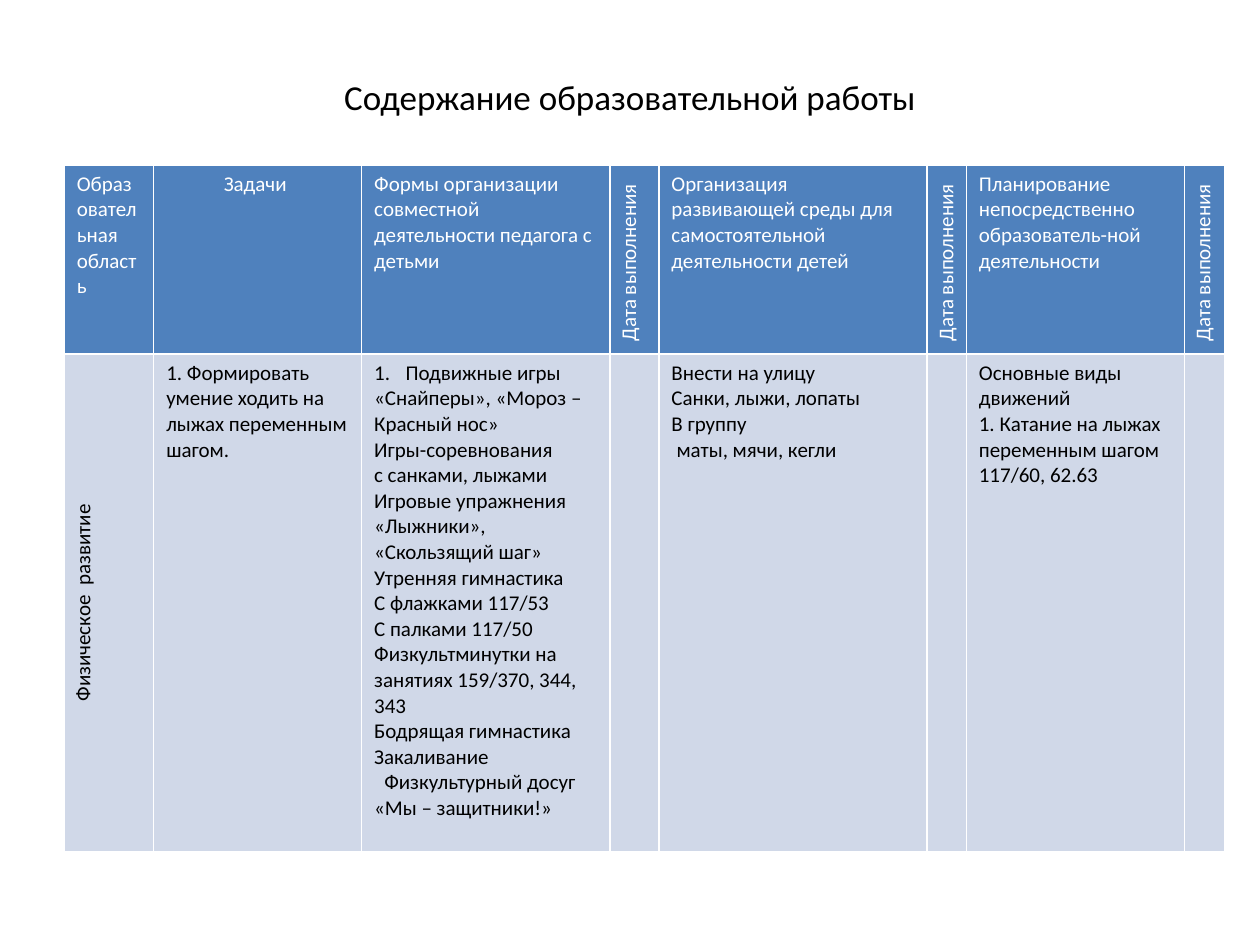
from lxml.etree import SubElement
from pptx import Presentation
from pptx.dml.color import RGBColor
from pptx.enum.text import MSO_ANCHOR, PP_ALIGN
from pptx.oxml.ns import qn
from pptx.util import Inches, Pt

WIDE, HIGH = 10, 7.5
BLUE, PALE, WHITE, BLACK = "4F81BD", "D0D8E8", "FFFFFF", "000000"
COLS = [0.71, 1.65, 1.97, 0.39, 2.13, 0.31, 1.73, 0.32]
ROWS = [1.5, 3.95]
DATE = "Дата выполнения"
HEAD = [
    "Образовательная область",
    "Задачи ",
    "Формы организации совместной деятельности педагога с детьми",
    DATE,
    "Организация развивающей среды для самостоятельной деятельности детей",
    DATE,
    "Планирование непосредственно образователь-ной деятельности",
    DATE,
]
GAMES = [
    "Подвижные игры",
    "«Снайперы», «Мороз – Красный нос»",
    "Игры-соревнования",
    "с санками, лыжами",
    "Игровые упражнения",
    "«Лыжники», «Скользящий шаг»",
    "Утренняя гимнастика",
    "С флажками 117/53",
    "С палками 117/50",
    "Физкультминутки на занятиях 159/370, 344, 343",
    "Бодрящая гимнастика",
    "Закаливание",
    "Физкультурный досуг",
    "«Мы – защитники!»",
]
BODY = [
    "Физическое  развитие",
    "1. Формировать умение ходить на лыжах переменным шагом.",
    "\n".join(GAMES),
    "",
    "Внести на улицу\nСанки, лыжи, лопаты\nВ группу\nматы, мячи, кегли",
    "",
    "Основные виды движений\n1. Катание на лыжах переменным шагом 117/60, 62.63",
    "",
]
TURNED = {(0, 3), (0, 5), (0, 7), (1, 0)}
CENTRED = {(0, 1), (1, 0)}


def paint(hue):
    return RGBColor.from_string(hue)


def style(frame, size, hue, align):
    for para in frame.paragraphs:
        para.alignment = align
        for run in para.runs:
            font = run.font
            font.name, font.size, font.bold = "Calibri", Pt(size), False
            font.color.rgb = paint(hue)


def indent(para, left, first=0):
    props = para._p.get_or_add_pPr()
    props.set("marL", str(Inches(left)))
    props.set("indent", str(Inches(first)))
    return props


def number(para):
    props = indent(para, 0.25, -0.25)
    SubElement(props, qn("a:buFont"), typeface="+mj-lt")
    SubElement(props, qn("a:buAutoNum"), type="arabicPeriod")


def border(cell):
    props = cell._tc.get_or_add_tcPr()
    for side in "LRTB":
        line = SubElement(props, qn("a:ln" + side), w=str(Pt(1)))
        fill = SubElement(line, qn("a:solidFill"))
        SubElement(fill, qn("a:srgbClr"), val=WHITE)


def fill_cell(cell, spot, text):
    hue, ink = ((BLUE, WHITE), (PALE, BLACK))[spot[0]]
    border(cell)
    cell.fill.solid()
    cell.fill.fore_color.rgb = paint(hue)
    if spot in TURNED:
        cell._tc.get_or_add_tcPr().set("vert", "vert270")
    if text:
        cell.text_frame.text = text
        align = PP_ALIGN.CENTER if spot in CENTRED else PP_ALIGN.LEFT
        style(cell.text_frame, 12, ink, align)


def add_title(slide, box):
    frame = slide.shapes.add_textbox(*map(Inches, box)).text_frame
    frame.word_wrap = True
    frame.vertical_anchor = MSO_ANCHOR.MIDDLE
    frame.text = "Содержание образовательной работы"
    style(frame, 20, BLACK, PP_ALIGN.CENTER)


def add_plan(slide, box):
    size = len(ROWS), len(COLS)
    table = slide.shapes.add_table(*size, *map(Inches, box)).table
    for col, width in zip(table.columns, COLS):
        col.width = Inches(width)
    for row, height in zip(table.rows, ROWS):
        row.height = Inches(height)
    for r, texts in enumerate((HEAD, BODY)):
        for c, text in enumerate(texts):
            fill_cell(table.cell(r, c), (r, c), text)
    games = table.cell(1, 2).text_frame.paragraphs
    number(games[0])
    indent(games[-2], 0, 0.08)
    indent(table.cell(1, 4).text_frame.paragraphs[-1], 0, 0.04)


def main():
    deck = Presentation()
    deck.slide_width, deck.slide_height = Inches(WIDE), Inches(HIGH)
    slide = deck.slides.add_slide(deck.slide_layouts[6])
    add_title(slide, (WIDE * 0.05, HIGH * 0.04, WIDE * 0.9, 0.93))
    add_plan(slide, (0.51, 1.31, sum(COLS), sum(ROWS)))
    deck.save("out.pptx")


if __name__ == "__main__":
    main()
